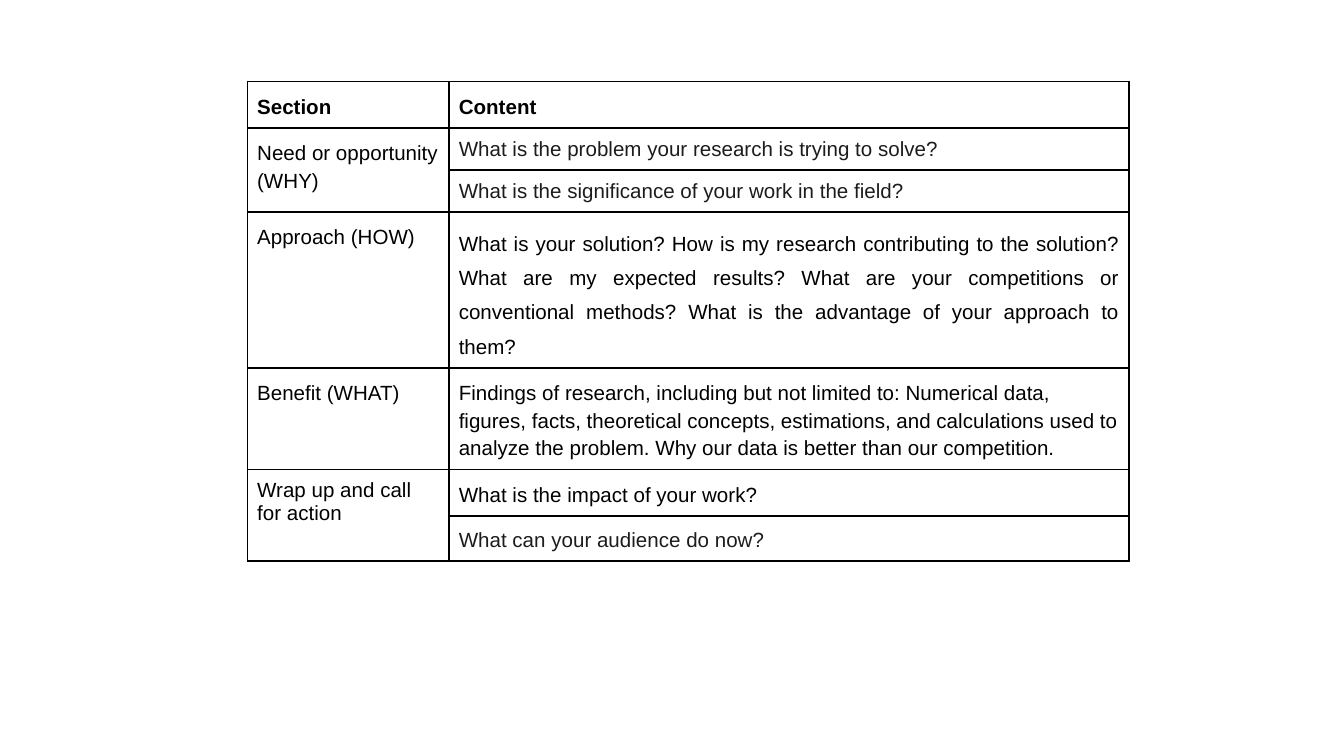
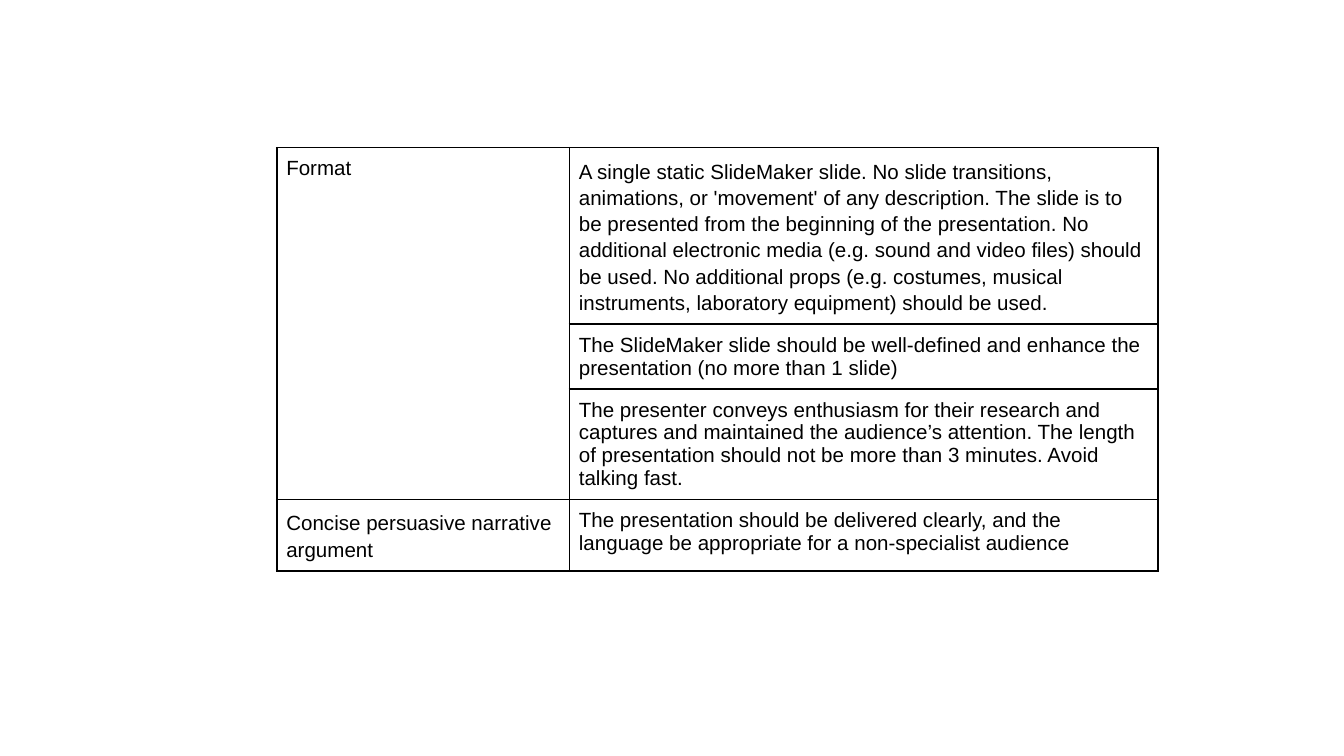
from lxml import etree
from pptx import Presentation
from pptx.dml.color import RGBColor
from pptx.enum.text import PP_ALIGN
from pptx.oxml.ns import qn
from pptx.util import Cm, Pt

JUSTIFY = PP_ALIGN.JUSTIFY
COLORS = {"text": "000000", "soft": "1D1C1D", "border": "000000"}
FONT = "Arial"
FONT_SIZE = Pt(11)
BORDER_WIDTH = Pt(1)
CELL_MARGIN = Cm(0.18)
ROW_HEIGHT = Cm(0.74)
BLANK_LAYOUT = 6

SECTION_ROWS = [
    [("Section", {"bold": True, "spacing": 1.2}),
     ("Content", {"bold": True, "spacing": 1.2})],
    [("Need or opportunity (WHY)", {"spacing": 1.2, "span": 2}),
     ("What is the problem your research is trying to solve?", {"color": "soft"})],
    [None,
     ("What is the significance of your work in the field?", {"color": "soft"})],
    [("Approach (HOW)", {"spacing": 1.2}),
     ("What is your solution? How is my research contributing to the solution? "
      "What are my expected results? What are your competitions or conventional "
      "methods? What is the advantage of your approach to them?",
      {"spacing": 1.5, "align": JUSTIFY})],
    [("Benefit (WHAT)", {"spacing": 1.2}),
     ("Findings of research, including but not limited to: Numerical data, figures, "
      "facts, theoretical concepts, estimations, and calculations used to analyze "
      "the problem. Why our data is better than our competition.", {"spacing": 1.2})],
    [("Wrap up and call for action", {"span": 2}),
     ("What is the impact of your work?", {"spacing": 1.2})],
    [None,
     ("What can your audience do now?", {"spacing": 1.15, "color": "soft"})],
]

FORMAT_ROWS = [
    [("Format", {"span": 3}),
     ("A single static SlideMaker slide. No slide transitions, animations, or "
      "'movement' of any description. The slide is to be presented from the beginning "
      "of the presentation. No additional electronic media (e.g. sound and video "
      "files) should be used. No additional props (e.g. costumes, musical "
      "instruments, laboratory equipment) should be used.", {"spacing": 1.15})],
    [None,
     ("The SlideMaker slide should be well-defined and enhance the presentation "
      "(no more than 1 slide)", {})],
    [None,
     ("The presenter conveys enthusiasm for their research and captures and "
      "maintained the audience’s attention. The length of presentation should not "
      "be more than 3 minutes. Avoid talking fast.", {})],
    [("Concise persuasive narrative argument", {"spacing": 1.15}),
     ("The presentation should be delivered clearly, and the language be "
      "appropriate for a non-specialist audience", {})],
]


def style_cell(cell):
    cell.margin_left = cell.margin_right = CELL_MARGIN
    cell.margin_top = cell.margin_bottom = CELL_MARGIN
    properties = cell._tc.get_or_add_tcPr()
    for side in ("a:lnL", "a:lnR", "a:lnT", "a:lnB"):
        line = etree.SubElement(properties, qn(side), w=str(BORDER_WIDTH))
        fill = etree.SubElement(line, qn("a:solidFill"))
        etree.SubElement(fill, qn("a:srgbClr"), val=COLORS["border"])
    cell.fill.background()
    cell.text_frame.paragraphs[0].font.size = FONT_SIZE


def write_cell(cell, text, bold=False, color="text", spacing=1.0, align=None):
    para = cell.text_frame.paragraphs[0]
    para.text = text
    para.line_spacing = spacing
    para.alignment = align
    para.font.name = FONT
    para.font.bold = bold
    para.font.color.rgb = RGBColor.from_string(COLORS[color])


def add_guide_table(page, box, column_widths, rows):
    frame = page.shapes.add_table(len(rows), len(column_widths), *box)
    table = frame.table
    table.first_row = False
    table.horz_banding = False
    for column, width in zip(table.columns, column_widths):
        column.width = width
    for row_index, row in enumerate(rows):
        table.rows[row_index].height = ROW_HEIGHT
        for column_index, entry in enumerate(row):
            cell = table.cell(row_index, column_index)
            style_cell(cell)
            if entry is None:
                continue
            text, style = entry
            span = style.get("span", 1)
            if span > 1:
                cell.merge(table.cell(row_index + span - 1, column_index))
            write_cell(cell, text, **{key: value for key, value in style.items() if key != "span"})
    frame.height = box[3]


def add_table_slide(deck, box, column_widths, rows):
    page = deck.slides.add_slide(deck.slide_layouts[BLANK_LAYOUT])
    add_guide_table(page, box, column_widths, rows)


def main():
    deck = Presentation()
    deck.slide_width = Cm(25.4)
    deck.slide_height = Cm(14.29)
    add_table_slide(deck, (Cm(4.68), Cm(1.54), Cm(16.66), Cm(9.25)),
                    (Cm(3.81), Cm(12.85)), SECTION_ROWS)
    add_table_slide(deck, (Cm(5.23), Cm(2.79), Cm(16.66), Cm(8.41)),
                    (Cm(5.53), Cm(11.13)), FORMAT_ROWS)
    deck.save("out.pptx")


if __name__ == "__main__":
    main()
